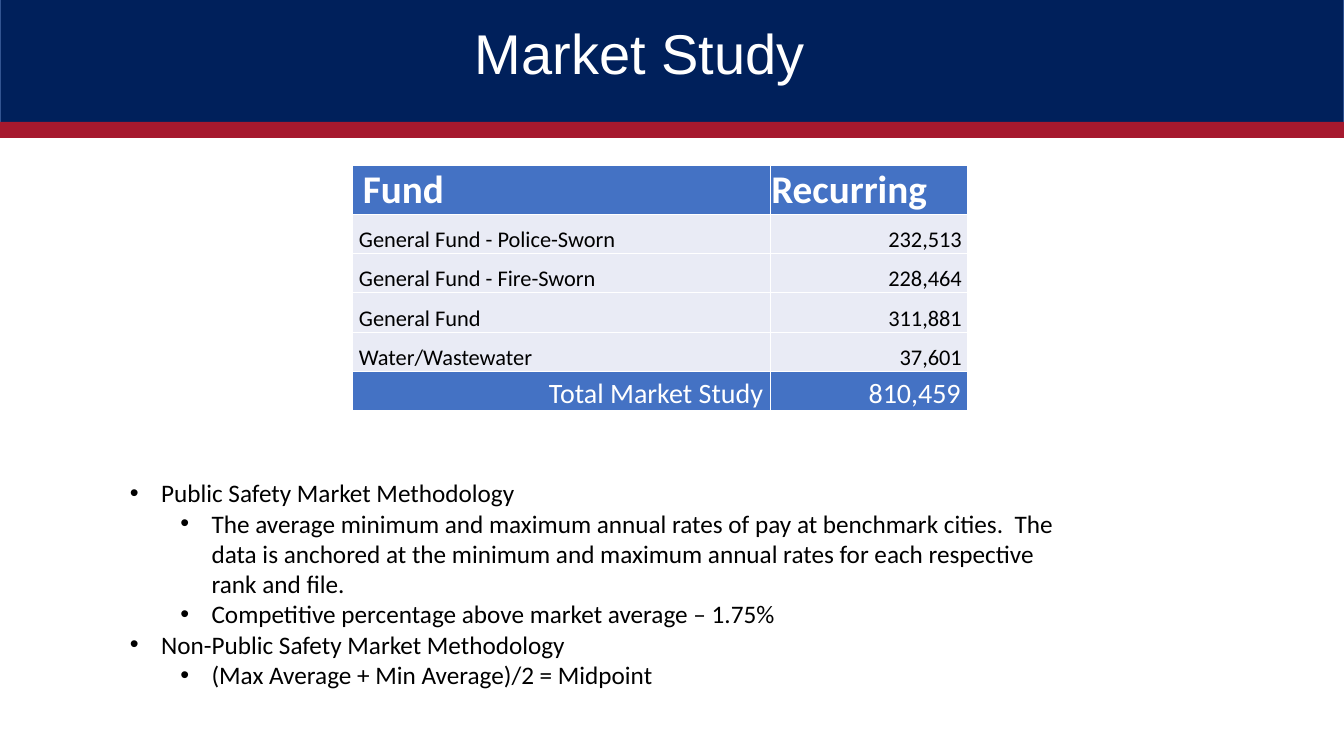
from lxml.etree import SubElement as sub
from pptx import Presentation
from pptx.dml.color import RGBColor as RGB
from pptx.enum.shapes import MSO_SHAPE as SHAPE
from pptx.enum.text import MSO_ANCHOR as ANCHOR, PP_ALIGN as ALIGN
from pptx.oxml.ns import qn
from pptx.util import Pt

PX = 9144
HUES = {"navy": "00205B", "edge": "325491", "red": "A6192E", "blue": "4472C4",
        "pale": "E9EBF5", "white": "FFFFFF", "black": "000000"}
FUNDS = [("General Fund - Police-Sworn", "232,513"),
         ("General Fund - Fire-Sworn", "228,464"),
         ("General Fund", "311,881"),
         ("Water/Wastewater", "37,601")]
POINTS = [(0, "Public Safety Market Methodology"),
          (1, "The average minimum and maximum annual rates of pay at benchmark cities.  "
              "The data is anchored at the minimum and maximum annual rates for each "
              "respective rank and file."),
          (1, "Competitive percentage above market average – 1.75%"),
          (0, "Non-Public Safety Market Methodology"),
          (1, "(Max Average + Min Average)/2 = Midpoint")]


def hue(name):
    return RGB.from_string(HUES[name])


def scale(*sizes):
    return [size * PX for size in sizes]


def add_run(para, text, size, color, face="Calibri", bold=False):
    run = para.add_run()
    run.text = text
    font = run.font
    font.size, font.name, font.bold = Pt(size), face, bold
    font.color.rgb = hue(color)


def add_band(slide, box, fill, edge=None):
    band = slide.shapes.add_shape(SHAPE.RECTANGLE, *scale(*box))
    band.shadow.inherit = False
    band.fill.solid()
    band.fill.fore_color.rgb = hue(fill)
    if edge:
        band.line.color.rgb = hue(edge)
        band.line.width = Pt(1)
    else:
        band.line.fill.background()


def add_box(slide, box):
    frame = slide.shapes.add_textbox(*scale(*box)).text_frame
    frame.word_wrap = True
    return frame


def add_title(slide, text):
    para = add_box(slide, (461, 21, 610, 87)).paragraphs[0]
    para.line_spacing = 0.9
    add_run(para, text, 40, "white", "Arial")


def set_edges(cell):
    props = cell._tc.get_or_add_tcPr()
    for side in ("lnL", "lnR", "lnT", "lnB"):
        line = sub(props, qn(f"a:{side}"), w=str(Pt(1)))
        sub(sub(line, qn("a:solidFill")), qn("a:srgbClr"), val=HUES["white"])


def fill_cell(cell, text, fill, size, color, bold=False, right=False, left=1, end=1):
    set_edges(cell)
    cell.fill.solid()
    cell.fill.fore_color.rgb = hue(fill)
    cell.vertical_anchor = ANCHOR.BOTTOM
    cell.margin_left, cell.margin_right, cell.margin_top, cell.margin_bottom = scale(
        left, end, 1, 0)
    para = cell.text_frame.paragraphs[0]
    para.alignment = ALIGN.RIGHT if right else ALIGN.LEFT
    add_run(para, text, size, color, bold=bold)


def add_funds(slide):
    count = len(FUNDS) + 2
    table = slide.shapes.add_table(count, 2, *scale(350, 164, 610, 39 * count)).table
    for col, width in zip(table.columns, (414, 196)):
        col.width = width * PX
    for row in table.rows:
        row.height = 39 * PX
    head = dict(fill="blue", size=28, color="white", bold=True)
    fill_cell(table.cell(0, 0), "Fund", left=10, **head)
    fill_cell(table.cell(0, 1), "Recurring", **head)
    body = dict(fill="pale", size=16, color="black")
    for row, (fund, cost) in enumerate(FUNDS, 1):
        fill_cell(table.cell(row, 0), fund, left=6, **body)
        fill_cell(table.cell(row, 1), cost, right=True, end=6, **body)
    for col, text in enumerate(("Total Market Study", "810,459")):
        fill_cell(table.cell(count - 1, col), text, "blue", 20, "white", right=True, end=7)


def add_points(slide):
    frame = add_box(slide, (119, 469, 938, 222))
    for order, (level, text) in enumerate(POINTS):
        para = frame.add_paragraph() if order else frame.paragraphs[0]
        para.level = level
        props = para._p.get_or_add_pPr()
        props.set("marL", str((31 + 50 * level) * PX))
        props.set("indent", str(-31 * PX))
        sub(props, qn("a:buFont"), typeface="Arial")
        sub(props, qn("a:buChar"), char="•")
        add_run(para, text, 18, "black")


def main():
    deck = Presentation()
    deck.slide_width, deck.slide_height = scale(1333, 750)
    slide = deck.slides.add_slide(deck.slide_layouts[6])
    add_band(slide, (0, -1, 1333, 123), "navy", "edge")
    add_band(slide, (0, 121, 1333, 16), "red")
    add_funds(slide)
    add_title(slide, "Market Study")
    add_points(slide)
    deck.save("out.pptx")


if __name__ == "__main__":
    main()
